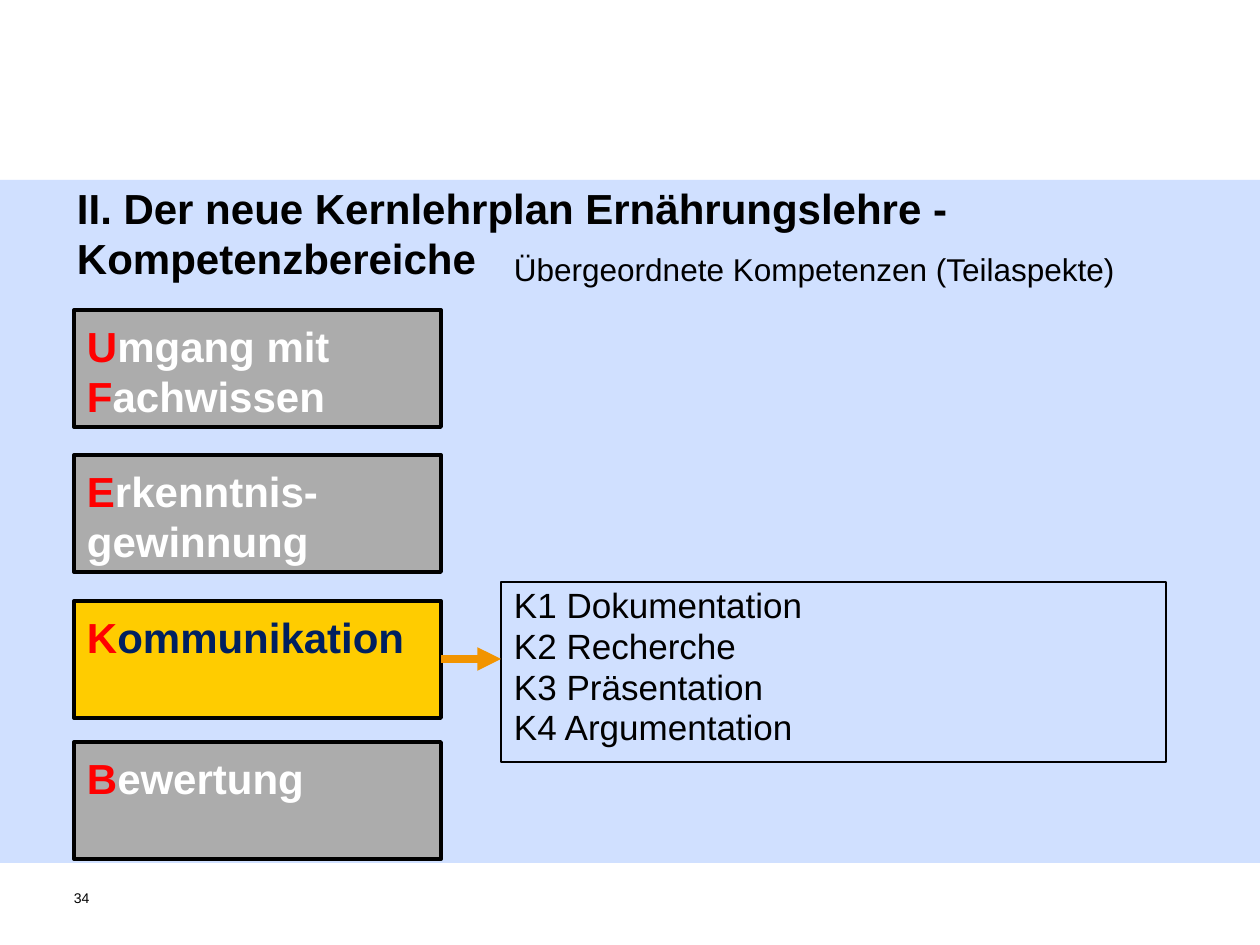
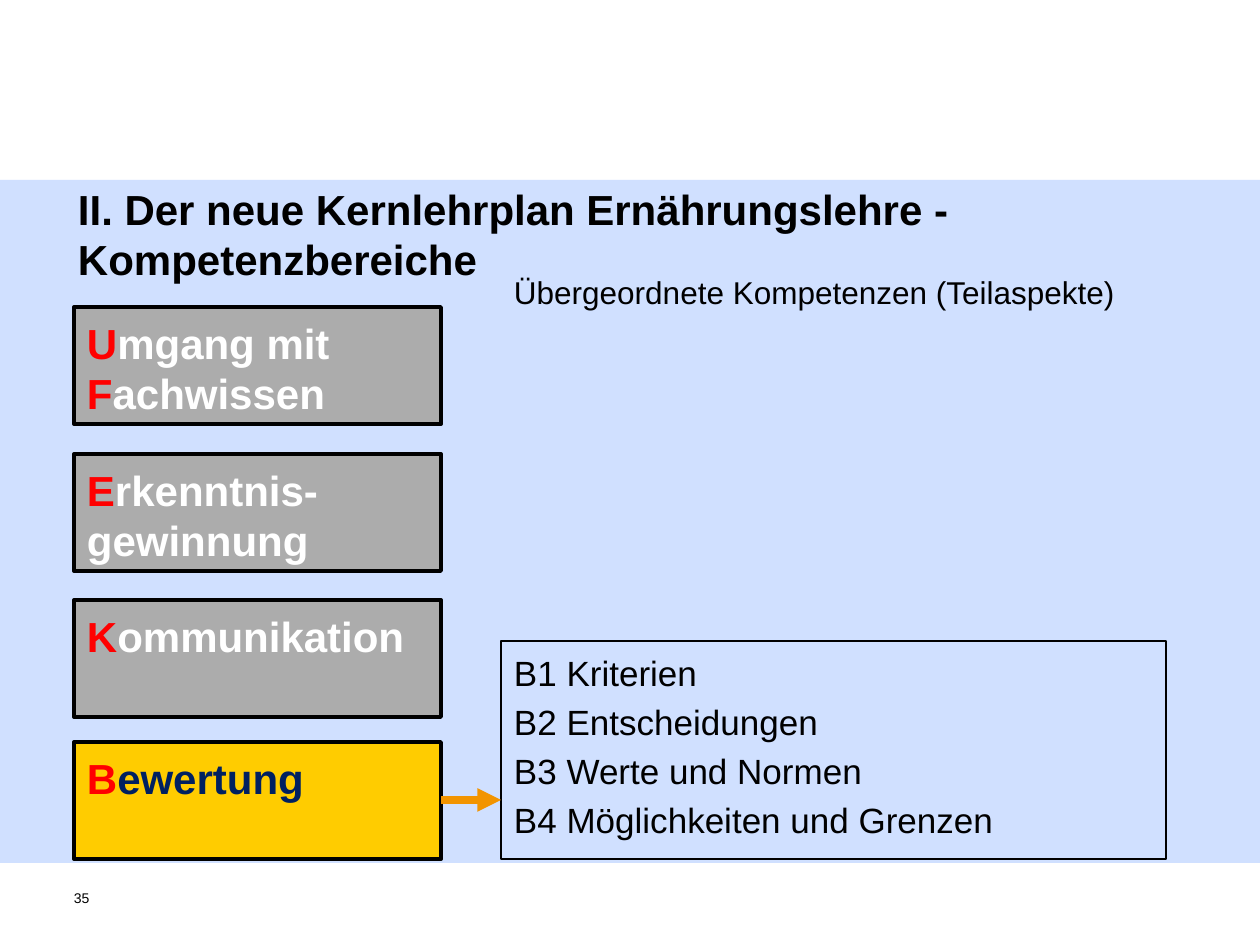
from lxml.etree import SubElement
from pptx import Presentation
from pptx.dml.color import RGBColor
from pptx.enum.shapes import MSO_CONNECTOR, MSO_SHAPE
from pptx.enum.text import MSO_ANCHOR, MSO_AUTO_SIZE, PP_ALIGN
from pptx.oxml.ns import qn
from pptx.util import Pt

PX = 914400 / 126
COLORS = {
    "band": "6699FF", "text": "000000", "initial": "FF0000", "muted": "ACACAC",
    "muted_text": "FFFFFF", "active": "FFCC00", "active_text": "002060", "arrow": "F29400",
}
RGB = {name: RGBColor.from_string(value) for name, value in COLORS.items()}
TITLE_FONT = {"name": "Arial", "size": Pt(24), "bold": True}
AREA_FONT = TITLE_FONT
SUBTITLE_FONT = {"name": "Arial", "size": Pt(18), "bold": False}
ASPECT_FONT = {"name": "Arial", "size": Pt(20), "bold": False}
NUMBER_FONT = {"name": "Arial", "size": Pt(8), "bold": False}
FRAME = {
    "word_wrap": True, "auto_size": MSO_AUTO_SIZE.NONE, "vertical_anchor": MSO_ANCHOR.TOP,
    "margin_left": px_side if (px_side := round(13 * PX)) else 0, "margin_right": px_side,
    "margin_top": round(6 * PX), "margin_bottom": round(6 * PX),
}
BOXED_FRAME = FRAME | {"margin_top": round(10 * PX)}
NUMBER_FRAME = FRAME | {f"margin_{side}": 0 for side in ("left", "right", "top", "bottom")}

TITLE = "II. Der neue Kernlehrplan Ernährungslehre - Kompetenzbereiche"
SUBTITLE = "Übergeordnete Kompetenzen (Teilaspekte)"
AREAS = [
    [("U", "mgang mit "), ("F", "achwissen")],
    [("E", "rkenntnis-gewinnung")],
    [("K", "ommunikation")],
    [("B", "ewertung")],
]
AREA_LEFT, AREA_WIDTH, AREA_HEIGHT = 74, 367, 117
PANEL_LEFT, PANEL_WIDTH = 501, 665
SLIDES = [
    {
        "number": "34", "active": 2, "title": (64, 176), "subtitle_top": 244,
        "area_tops": (310, 455, 601, 742), "panel": (582, 180), "line_spacing": 0.8,
        "aspects": ["K1 Dokumentation", "K2 Recherche", "K3 Präsentation", "K4 Argumentation"],
    },
    {
        "number": "35", "active": 3, "title": (65, 177), "subtitle_top": 267,
        "area_tops": (307, 454, 600, 742), "panel": (641, 218), "line_spacing": 1.0,
        "aspects": ["B1 Kriterien", "B2 Entscheidungen", "B3 Werte und Normen",
                    "B4 Möglichkeiten und Grenzen"],
    },
]


def add_box(slide, left, top, width, height, fill=None, line_width=None):
    box = slide.shapes.add_shape(
        MSO_SHAPE.RECTANGLE, *(round(v * PX) for v in (left, top, width, height)))
    box.shadow.inherit = False
    if fill:
        box.fill.solid()
        box.fill.fore_color.rgb = RGB[fill]
    else:
        box.fill.background()
    if line_width:
        box.line.color.rgb = RGB["text"]
        box.line.width = Pt(line_width)
    else:
        box.line.fill.background()
    return box


def write(shape, paragraphs, font_format, frame_format):
    frame = shape.text_frame
    for key, value in frame_format.items():
        setattr(frame, key, value)
    for index, runs in enumerate(paragraphs):
        paragraph = frame.add_paragraph() if index else frame.paragraphs[0]
        paragraph.alignment = PP_ALIGN.LEFT
        for text, color in runs:
            run = paragraph.add_run()
            run.text = text
            for key, value in font_format.items():
                setattr(run.font, key, value)
            run.font.color.rgb = RGB[color]
    return frame.paragraphs


prs = Presentation()
prs.slide_width, prs.slide_height = round(1260 * PX), round(945 * PX)
layout = prs.slide_layouts[5]

for position, content in enumerate(SLIDES):
    slide = prs.slides.add_slide(layout)

    if position == 0:
        band = add_box(slide, 0, 180, 1260, 683, "band")
        band_color = band.fill._xPr.find(qn("a:solidFill"))[0]
        SubElement(band_color, qn("a:alpha"), val="30000")
        layout.shapes._spTree.insert(2, band._element)

    title = slide.shapes.title
    title_left, title_top = content["title"]
    title.left, title.top = round(title_left * PX), round(title_top * PX)
    title.width, title.height = round(1162 * PX), round(68 * PX)
    write(title, [[(TITLE, "text")]], TITLE_FONT, FRAME)

    panel_top, panel_height = content["panel"]
    panel = add_box(slide, PANEL_LEFT, panel_top, PANEL_WIDTH, panel_height, line_width=1.5)
    aspects = write(panel, [[(aspect, "text")] for aspect in content["aspects"]],
                    ASPECT_FONT, BOXED_FRAME)
    for index, aspect in enumerate(aspects):
        aspect.line_spacing = content["line_spacing"]
        aspect.space_before = Pt(4 if index else 0)

    for index, (words, top) in enumerate(zip(AREAS, content["area_tops"])):
        state = "active" if index == content["active"] else "muted"
        area = add_box(slide, AREA_LEFT, top, AREA_WIDTH, AREA_HEIGHT, state, 2.25)
        runs = [run for initial, rest in words
                for run in ((initial, "initial"), (rest, state + "_text"))]
        write(area, [runs], AREA_FONT, BOXED_FRAME)

    arrow_y = round((content["area_tops"][content["active"]] + AREA_HEIGHT // 2) * PX)
    arrow = slide.shapes.add_connector(
        MSO_CONNECTOR.STRAIGHT, round((AREA_LEFT + AREA_WIDTH) * PX), arrow_y,
        round(PANEL_LEFT * PX), arrow_y)
    arrow.line.color.rgb = RGB["arrow"]
    arrow.line.width = Pt(4.5)
    SubElement(arrow.line._get_or_add_ln(), qn("a:tailEnd"), type="triangle")
    SubElement(arrow._element.spPr, qn("a:effectLst"))

    subtitle = add_box(slide, PANEL_LEFT, content["subtitle_top"], 640, 50)
    write(subtitle, [[(SUBTITLE, "text")]], SUBTITLE_FONT, FRAME)

    slide_number = add_box(slide, AREA_LEFT, 890, 40, 47)
    write(slide_number, [[(content["number"], "text")]], NUMBER_FONT, NUMBER_FRAME)

prs.save("out.pptx")
